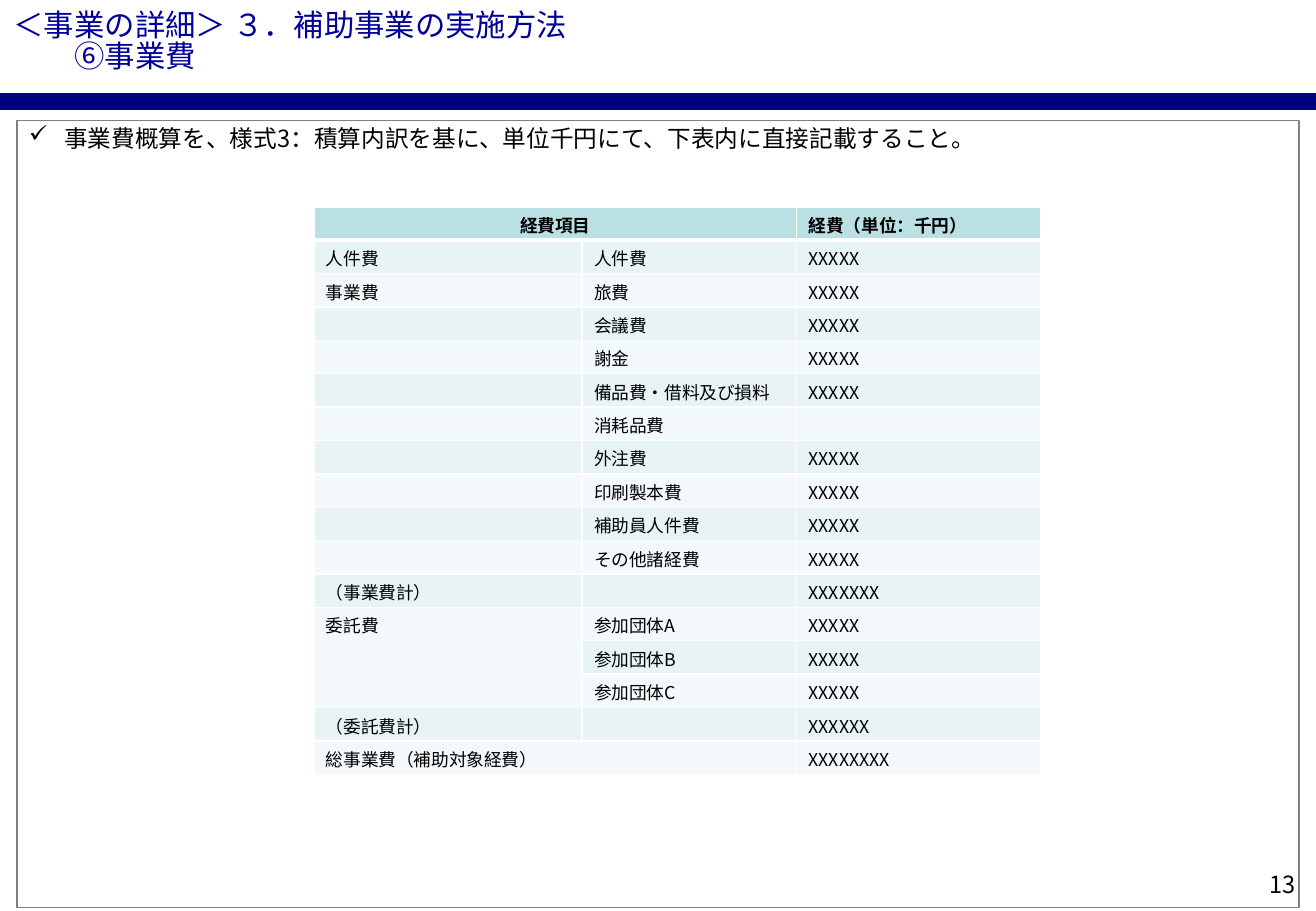
from lxml.etree import SubElement
from pptx import Presentation
from pptx.dml.color import RGBColor
from pptx.enum.shapes import MSO_CONNECTOR, MSO_SHAPE
from pptx.enum.text import MSO_ANCHOR as ANCHOR, PP_ALIGN as ALIGN
from pptx.oxml.ns import qn
from pptx.util import Pt

FONT = "Noto Sans CJK JP"
COLUMN_WIDTHS = (159, 127.2, 144.4)
ROW_HEIGHT = 19.8
HEADER_FILL = "BBE0E3"
BAND_FILLS = ("F3F9FA", "E7F3F4")
COSTS = [
    ("経費項目", "", "経費（単位：千円）"),
    ("人件費", "人件費", "XXXXX"),
    ("事業費", "旅費", "XXXXX"),
    ("", "会議費", "XXXXX"),
    ("", "謝金", "XXXXX"),
    ("", "備品費・借料及び損料", "XXXXX"),
    ("", "消耗品費", ""),
    ("", "外注費", "XXXXX"),
    ("", "印刷製本費", "XXXXX"),
    ("", "補助員人件費", "XXXXX"),
    ("", "その他諸経費", "XXXXX"),
    ("（事業費計）", "", "XXXXXXX"),
    ("委託費", "参加団体A", "XXXXX"),
    ("", "参加団体B", "XXXXX"),
    ("", "参加団体C", "XXXXX"),
    ("（委託費計）", "", "XXXXXX"),
    ("総事業費（補助対象経費）", "", "XXXXXXXX"),
]
# First and last cell of each merged area, as (row, column)
MERGES = [((0, 0), (0, 1)), ((12, 0), (14, 0)), ((16, 0), (16, 1))]


def rgb(color):
    return RGBColor.from_string(color)


def write(p, text, size=14, color="000000", bold=False, align=ALIGN.LEFT,
          spacing=1.0, indent=0, bullet=None):
    """Format a paragraph; with a bullet, the indent is a hanging one."""
    p.alignment = align
    p.line_spacing = spacing
    p.space_before = Pt(0)
    pPr = p._p.get_or_add_pPr()
    pPr.set("marL", str(Pt(indent)))
    pPr.set("indent", str(-Pt(indent) if bullet else 0))
    if bullet:
        SubElement(pPr, qn("a:buChar"), char=bullet)
    if not text:
        SubElement(p._p, qn("a:endParaRPr"), sz=str(int(size * 100)))
        return
    r = p.add_run()
    r.text = text
    r.font.size = Pt(size)
    r.font.bold = bold
    r.font.name = FONT
    r.font.color.rgb = rgb(color)
    SubElement(r._r.get_or_add_rPr(), qn("a:ea"), typeface=FONT)


def add_text_box(s, left, top, width, height):
    tf = s.shapes.add_textbox(Pt(left), Pt(top), Pt(width), Pt(height)).text_frame
    tf.word_wrap = True
    return tf


def add_rule(s, y, width, color, weight):
    line = s.shapes.add_connector(MSO_CONNECTOR.STRAIGHT, 0, Pt(y), Pt(width), Pt(y))
    line.line.color.rgb = rgb(color)
    line.line.width = Pt(weight)
    SubElement(line._element.spPr, qn("a:effectLst"))


def add_frame(s, left, top, width, height):
    sp = s.shapes.add_shape(MSO_SHAPE.RECTANGLE, Pt(left), Pt(top), Pt(width), Pt(height))
    sp.shadow.inherit = False
    sp.fill.background()
    sp.line.color.rgb = rgb("808080")
    sp.line.width = Pt(0.75)
    tf = sp.text_frame
    tf.word_wrap = True
    tf.vertical_anchor = ANCHOR.TOP
    tf.margin_top = Pt(4.4)
    return tf


def set_borders(cell, color, **weights):
    """Draw the borders L, R, T and B with the given weights in points."""
    tcPr = cell._tc.get_or_add_tcPr()
    for side in "LRTB":
        ln = SubElement(tcPr, qn(f"a:ln{side}"), w=str(Pt(weights.get(side, 1))))
        fill = SubElement(ln, qn("a:solidFill"))
        SubElement(fill, qn("a:srgbClr"), val=color)


def add_cost_table(s, left, top):
    table = s.shapes.add_table(
        len(COSTS), len(COLUMN_WIDTHS), Pt(left), Pt(top),
        Pt(sum(COLUMN_WIDTHS)), Pt(ROW_HEIGHT * len(COSTS))).table
    table.first_row = table.horz_banding = False
    for column, width in zip(table.columns, COLUMN_WIDTHS):
        column.width = Pt(width)
    for i, values in enumerate(COSTS):
        table.rows[i].height = Pt(ROW_HEIGHT)
        header = i == 0
        for j, value in enumerate(values):
            cell = table.cell(i, j)
            set_borders(cell, "FFFFFF", T=3 if i == 1 else 1, B=3 if header else 1)
            cell.fill.solid()
            cell.fill.fore_color.rgb = rgb(HEADER_FILL if header else BAND_FILLS[i % 2])
            cell.margin_top, cell.margin_bottom = Pt(3), 0
            write(cell.text_frame.paragraphs[0], value, size=10.5, bold=header,
                  align=ALIGN.CENTER if header and j == 0 else ALIGN.LEFT)
    for first, last in MERGES:
        table.cell(*first).merge(table.cell(*last))


def main():
    prs = Presentation()
    prs.slide_width, prs.slide_height = Pt(780), Pt(540)
    s = prs.slides.add_slide(prs.slide_layouts[6])

    add_rule(s, 60.3, 780, "000080", 10)
    number = add_text_box(s, 740, 514.8, 40, 24.5)
    write(number.paragraphs[0], "13", align=ALIGN.CENTER, spacing=0.85)
    frame = add_frame(s, 10, 71.5, 760, 466.5)
    write(frame.paragraphs[0],
          "事業費概算を、様式3：積算内訳を基に、単位千円にて、下表内に直接記載すること。",
          spacing=0.85, indent=21, bullet="✓")
    add_cost_table(s, 186, 122.6)
    title = add_text_box(s, 1, 3.6, 779, 51)
    title_format = {"size": 18, "color": "000099", "spacing": 0.85}
    write(title.paragraphs[0], "＜事業の詳細＞ ３．補助事業の実施方法", **title_format)
    write(title.add_paragraph(), "⑥事業費", indent=36, **title_format)

    prs.save("out.pptx")


if __name__ == "__main__":
    main()
